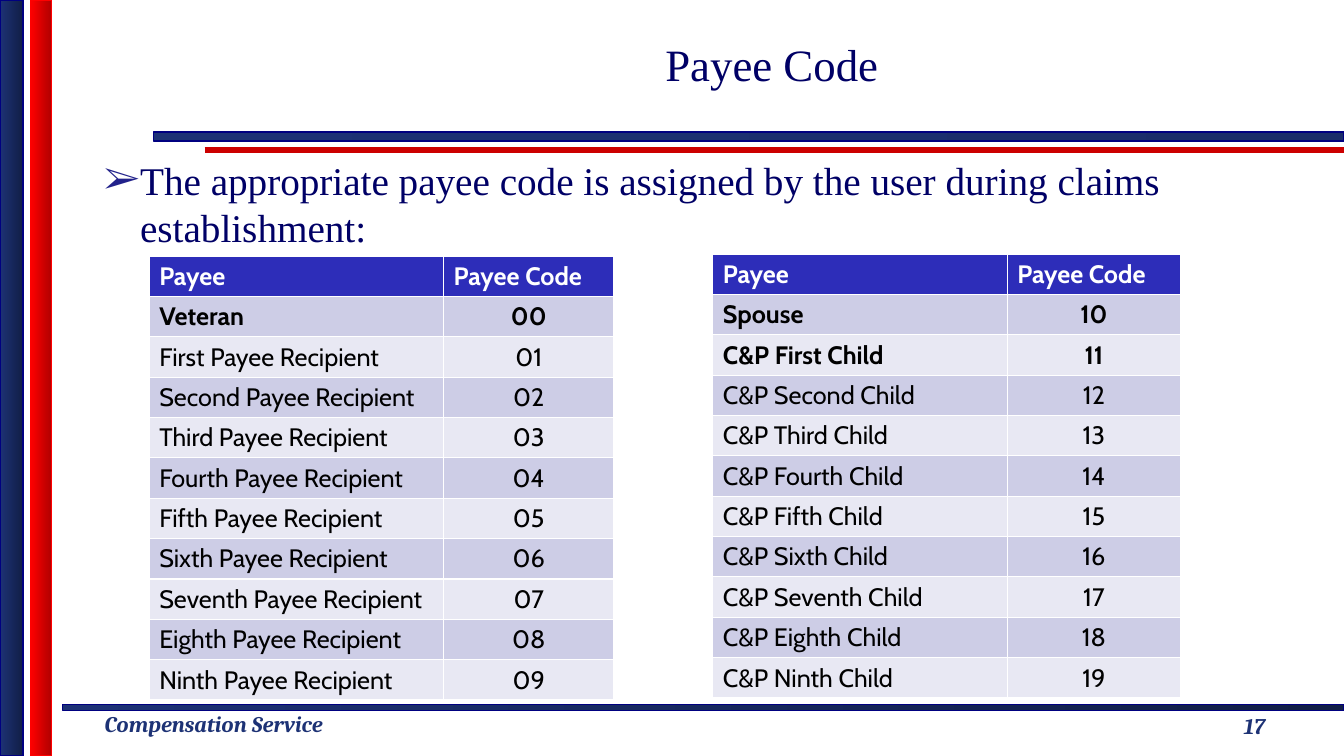
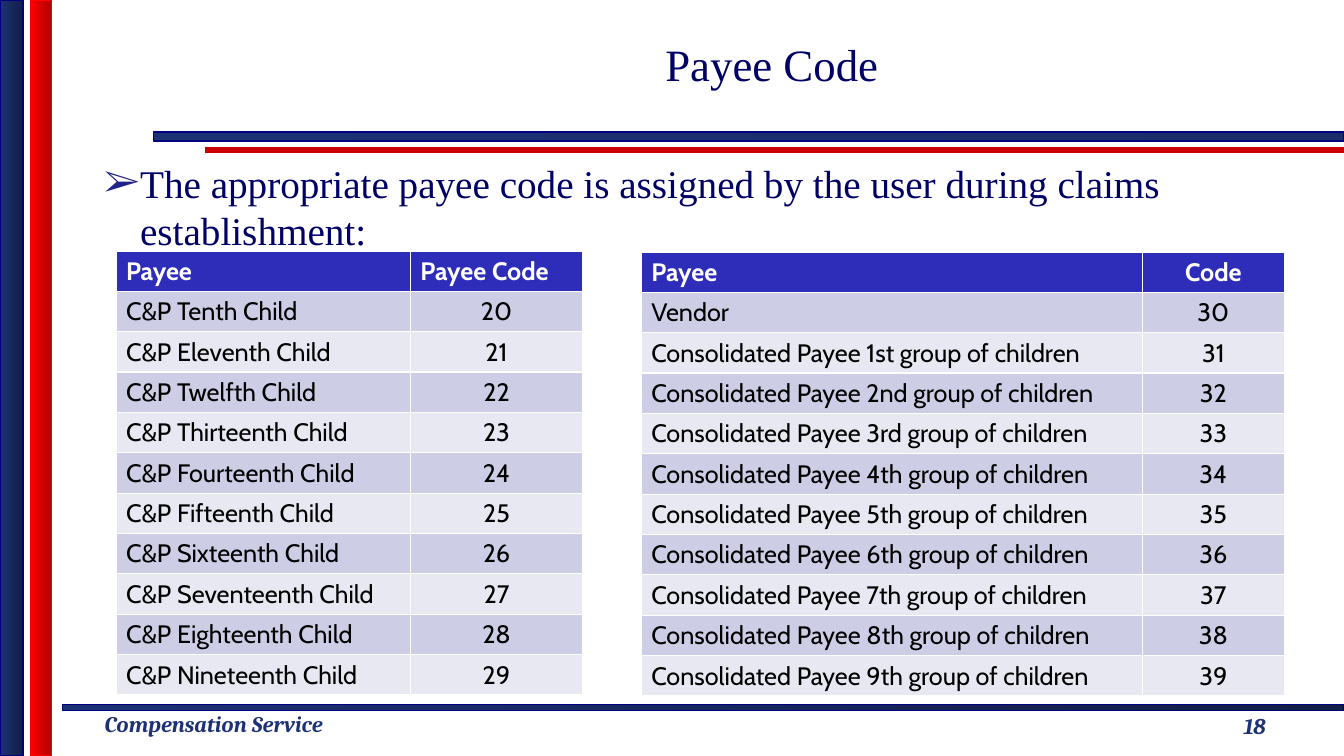
from lxml import etree
from pptx import Presentation
from pptx import util as u
from pptx.dml.color import RGBColor
from pptx.enum import shapes, text
from pptx.oxml import ns

C = {"navy": "1D3275", "navy_mid": "1A2D69", "navy_dark": "111E46", "edge": "000080",
     "red": "FF0000", "red_dark": "B20000", "rule": "CC0000", "text": "000066",
     "bullet": "22228B", "head": "2D2DB9", "odd": "CDCDE6", "even": "E8E8F3",
     "white": "FFFFFF", "black": "000000"}
BANDS = [((0.62, 6.99, 12.71, 0.06), "navy", "navy_dark", "edge"),
         ((1.52, 1.31, 11.81, 0.09), "navy", "navy_mid", "edge"),
         ((0, 0, 0.23, 7.5), "navy", "navy_dark", "edge"),
         ((0.3, 0, 0.21, 7.5), "red", "red_dark", "red")]
BOLD = {"Veteran", "Spouse", "C&P First Child"}
ORDINALS = ["First", "Second", "Third", "Fourth", "Fifth", "Sixth", "Seventh", "Eighth", "Ninth"]
TEENS = ["Tenth", "Eleventh", "Twelfth", "Thirteenth", "Fourteenth", "Fifteenth",
         "Sixteenth", "Seventeenth", "Eighteenth", "Nineteenth"]
GROUPS = ["1st", "2nd", "3rd"] + [f"{n}th" for n in range(4, 10)]
LEFT, CENTER = text.PP_ALIGN.LEFT, text.PP_ALIGN.CENTER

SLIDES = [
    (17, 1.5, [
        (1.48, 2.54, (2.92, 1.69), "Payee Code", LEFT, 0,
         ["Veteran"] + [f"{o} Payee Recipient" for o in ORDINALS]),
        (7.07, 2.52, (2.92, 1.72), "Payee Code", LEFT, 10,
         ["Spouse"] + [f"C&P {o} Child" for o in ORDINALS])]),
    (18, 1.53, [
        (1.15, 2.49, (2.92, 1.71), "Payee Code", LEFT, 20,
         [f"C&P {o} Child" for o in TEENS]),
        (6.36, 2.5, (4.97, 1.41), "Code", CENTER, 30,
         ["Vendor"] + [f"Consolidated Payee {g} group of children" for g in GROUPS])]),
]


def rgb(name):
    return RGBColor.from_string(C[name])


def write(tf, words, font, size, color, align=LEFT, bold=False, italic=False):
    p = tf.paragraphs[0]
    p.alignment = align
    r = p.add_run()
    r.text = words
    r.font.name, r.font.size = font, u.Pt(size)
    r.font.bold, r.font.italic = bold, italic
    r.font.color.rgb = rgb(color)
    return p


prs = Presentation()
prs.slide_width, prs.slide_height = u.Inches(13.33), u.Inches(7.5)

for number, body_top, tables in SLIDES:
    s = prs.slides.add_slide(prs.slide_layouts[1])

    rule = s.shapes.add_connector(shapes.MSO_CONNECTOR.STRAIGHT, u.Inches(2.03),
                                  u.Inches(1.49), u.Inches(13.33), u.Inches(1.49))
    rule.line.color.rgb = rgb("rule")
    rule.line.width = u.Pt(4)
    etree.SubElement(rule._element.spPr, ns.qn("a:effectLst"))

    for box, start, end, edge in BANDS:
        sp = s.shapes.add_shape(shapes.MSO_SHAPE.RECTANGLE, *map(u.Inches, box))
        sp.shadow.inherit = False
        sp.fill.gradient()
        sp.fill.gradient_angle = 0
        for stop, color in zip(sp.fill.gradient_stops, (start, end)):
            stop.color.rgb = rgb(color)
        sp.line.color.rgb = rgb(edge)
        sp.line.width = u.Pt(1)

    for box, words, align, anchor, wrap in [
            ((0.94, 7, 2.82, 0.37), "Compensation Service", LEFT, text.MSO_ANCHOR.TOP, False),
            ((11.56, 6.95, 1.77, 0.5), str(number), CENTER, text.MSO_ANCHOR.MIDDLE, True)]:
        tf = s.shapes.add_textbox(*map(u.Inches, box)).text_frame
        tf.word_wrap, tf.vertical_anchor = wrap, anchor
        write(tf, words, "Cambria", 16, "navy", align, bold=True, italic=True)

    title, body = s.shapes.title, s.placeholders[1]
    for sp, box, anchor in [(title, (2.34, 0, 10.63, 1.26), text.MSO_ANCHOR.MIDDLE),
                            (body, (0.93, body_top, 11.97, 6.62 - body_top), text.MSO_ANCHOR.TOP)]:
        sp.left, sp.top, sp.width, sp.height = map(u.Inches, box)
        sp.text_frame.vertical_anchor = anchor
        sp.text_frame.auto_size = text.MSO_AUTO_SIZE.NONE
    write(title.text_frame, "Payee Code", "Times New Roman", 32, "text", CENTER)
    p = write(body.text_frame, "The appropriate payee code is assigned by the user "
              "during claims establishment:", "Times New Roman", 28, "text")
    pPr = p._p.get_or_add_pPr()
    pPr.set("marL", str(u.Inches(0.36)))
    pPr.set("indent", str(-u.Inches(0.36)))
    color = etree.SubElement(pPr, ns.qn("a:buClr"))
    etree.SubElement(color, ns.qn("a:srgbClr")).set("val", C["bullet"])
    etree.SubElement(pPr, ns.qn("a:buFont")).set("typeface", "Times New Roman")
    etree.SubElement(pPr, ns.qn("a:buChar")).set("char", "➢")
    p.space_before = u.Pt(0)

    for left, top, widths, code_head, head_align, first_code, payees in tables:
        rows = [("Payee", code_head)]
        rows += [(name, f"{first_code + i:02d}") for i, name in enumerate(payees)]
        tbl = s.shapes.add_table(len(rows), 2, u.Inches(left), u.Inches(top),
                                 u.Inches(sum(widths)), u.Inches(0.4 * len(rows))).table
        for col, width in zip(tbl.columns, widths):
            col.width = u.Inches(width)
        for i, row in enumerate(rows):
            fill = "head" if i == 0 else "odd" if i % 2 else "even"
            for j, words in enumerate(row):
                cell = tbl.cell(i, j)
                cell.fill.solid()
                cell.fill.fore_color.rgb = rgb(fill)
                align = LEFT if j == 0 else CENTER if i else head_align
                write(cell.text_frame, words, "Cabin", 18, "black" if i else "white",
                      align, bold=i == 0 or row[0] in BOLD)

prs.save("out.pptx")
